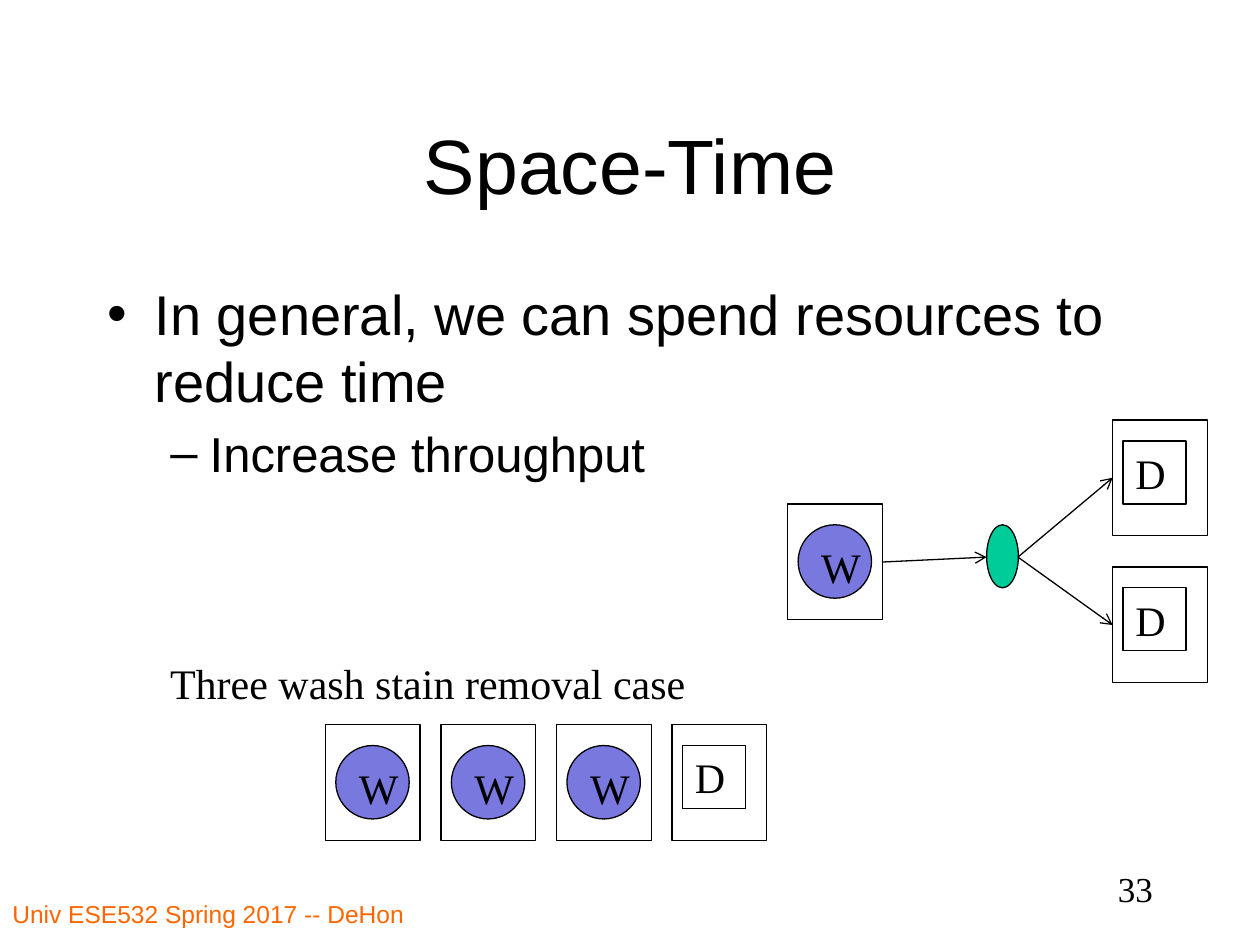
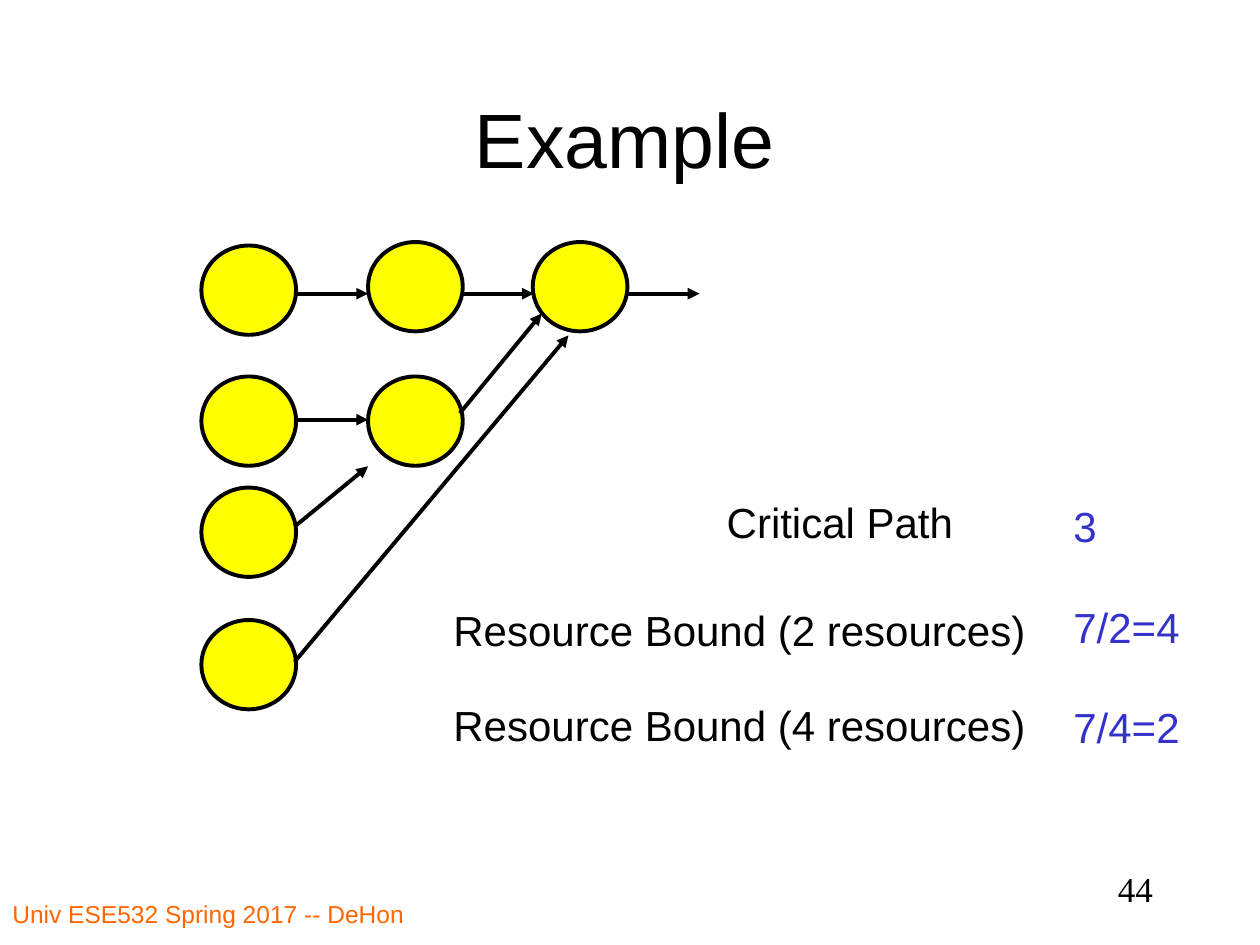
from lxml import etree
from pptx import Presentation
from pptx.dml.color import RGBColor
from pptx.enum import shapes, text
from pptx.oxml import ns
from pptx.util import Cm, Pt

SANS, SERIF = "Arial", "Times New Roman"
BLACK, WHITE, ORANGE, BLUE = "000000", "FFFFFF", "FF6600", "3333CC"
LILAC, GREEN, YELLOW = "7878DE", "00CC99", "FFFF00"
RECT, OVAL = shapes.MSO_SHAPE.RECTANGLE, shapes.MSO_SHAPE.OVAL
LEFT, RIGHT = text.PP_ALIGN.LEFT, text.PP_ALIGN.RIGHT


def rgb(value):
    return RGBColor.from_string(value)


def write(tf, lines, size, font=SANS, color=BLACK, **layout):
    """Fill a text frame with one paragraph per line; layout holds paragraph settings."""
    tf.text = "\n".join(lines)
    for p in tf.paragraphs:
        for name, value in layout.items():
            setattr(p, name, value)
        for r in p.runs:
            for name, value in {"size": Pt(size), "name": font}.items():
                setattr(r.font, name, value)
            r.font.color.rgb = rgb(color)


# Laundry stations: a frame holding a washer (W) or a dryer (D)
stations = [("W", 15.88, 10.16), ("D", 22.43, 8.47), ("D", 22.43, 11.43)]
stations += [(letter, 6.56 + 2.33 * i, 14.61) for i, letter in enumerate("WWWD")]
machines = {"W": (OVAL, 1.48, LILAC), "D": (RECT, 1.27, WHITE)}

# Nodes: shape, left, top, width, height, fill, label
laundry = []
for letter, x, y in stations:
    kind, side, fill = machines[letter]
    laundry += [(RECT, x, y, 1.91, 2.33, WHITE, ""),
                (kind, x + 0.21, y + 0.42, side, side, fill, letter)]
laundry.append((OVAL, 19.89, 10.58, 0.64, 1.27, GREEN, ""))

columns = [(4.06, [4.95, 7.59, 9.83, 12.5]), (7.42, [4.88, 7.59]), (10.74, [4.88])]
tasks = [(OVAL, x, y, 1.91, 1.8, YELLOW, "") for x, tops in columns for y in tops]

# Arrows: start x, start y, end x, end y
laundry_arrows = [(20.52, 11.23, 22.43, 9.63), (20.52, 11.23, 22.43, 12.6),
                  (17.78, 11.33, 19.89, 11.23)]
task_arrows = [(5.97 + 3.34 * i, 5.92, 7.42 + 3.34 * i, 5.92) for i in range(3)]
task_arrows += [(5.97, 8.46, 7.42, 8.46), (5.97, 10.59, 7.42, 9.4),
                (5.94, 13.34, 11.46, 6.76), (9.27, 8.33, 10.92, 6.32)]

# Labels: left, top, width, height, lines, font, colour
laundry_labels = [(3.18, 13.13, 11, 1.27, ["Three wash stain removal case"], SERIF, BLACK)]
task_labels = [
    (14.4, 9.88, 5.08, 1.27, ["Critical Path"], SANS, BLACK),
    (8.89, 12.07, 12.04, 1.27, ["Resource Bound (2 resources)"], SANS, BLACK),
    (8.89, 13.97, 12.04, 1.27, ["Resource Bound (4 resources)"], SANS, BLACK),
    (21.39, 9.96, 2.67, 5.33, ["3", "7/2=4", "7/4=2"], SANS, BLUE),
]

space_time = dict(title="Space-Time", title_at=(1.91, 1.7), number="33", layout=1,
                  nodes=laundry, arrows=laundry_arrows, labels=laundry_labels,
                  line=0.75, head="arrow")
example = dict(title="Example", title_at=(1.8, 1.19), number="44", layout=5,
               nodes=tasks, arrows=task_arrows, labels=task_labels,
               line=2.25, head="triangle")

prs = Presentation()
prs.slide_width, prs.slide_height = Cm(25.4), Cm(19.05)

for page in (space_time, example):
    s = prs.slides.add_slide(prs.slide_layouts[page["layout"]])
    title = s.shapes.title
    x, y = page["title_at"]
    title.left, title.top, title.width, title.height = Cm(x), Cm(y), Cm(21.59), Cm(3.18)
    write(title.text_frame, [page["title"]], 44)

    # Footer and page number
    for box, line, size, font, color, align in [
            ((0, 17.99, 11.64, 1.06), "Univ ESE532 Spring 2017 -- DeHon", 14, SANS, ORANGE, LEFT),
            ((18.2, 17.36, 5.29, 1.27), page["number"], 20, SERIF, BLACK, RIGHT)]:
        tf = s.shapes.add_textbox(*map(Cm, box)).text_frame
        tf.word_wrap = True
        write(tf, [line], size, font, color, alignment=align)

    for kind, x, y, w, h, fill, label in page["nodes"]:
        sp = s.shapes.add_shape(kind, Cm(x), Cm(y), Cm(w), Cm(h))
        sp.shadow.inherit = False
        sp.fill.solid()
        sp.fill.fore_color.rgb = rgb(fill)
        sp.line.color.rgb = rgb(BLACK)
        sp.line.width = Pt(page["line"])
        if label:
            sp.text_frame.vertical_anchor = text.MSO_ANCHOR.TOP
            write(sp.text_frame, [label], 24, SERIF, alignment=LEFT)

    for ends in page["arrows"]:
        arrow = s.shapes.add_connector(shapes.MSO_CONNECTOR.STRAIGHT, *map(Cm, ends))
        arrow.line.color.rgb = rgb(BLACK)
        arrow.line.width = Pt(page["line"])
        props = arrow.element.spPr
        etree.SubElement(props.find(ns.qn("a:ln")), ns.qn("a:tailEnd"), type=page["head"])
        etree.SubElement(props, ns.qn("a:effectLst"))

    for x, y, w, h, lines, font, color in page["labels"]:
        tf = s.shapes.add_textbox(Cm(x), Cm(y), Cm(w), Cm(h)).text_frame
        tf.word_wrap = False
        tf.auto_size = text.MSO_AUTO_SIZE.SHAPE_TO_FIT_TEXT
        write(tf, lines, 24, font, color)
        for p in tf.paragraphs[1:]:
            p.space_before = Pt(28.8)

# Bullets on the Space-Time slide
body = prs.slides[0].placeholders[1]
body.left, body.top, body.width, body.height = Cm(1.91), Cm(5.5), Cm(21.59), Cm(11.43)
write(body.text_frame, ["In general, we can spend resources to reduce time",
                        "Increase throughput"], 32)
detail = body.text_frame.paragraphs[1]
detail.level = 1
detail.runs[0].font.size = Pt(28)

prs.save("out.pptx")
